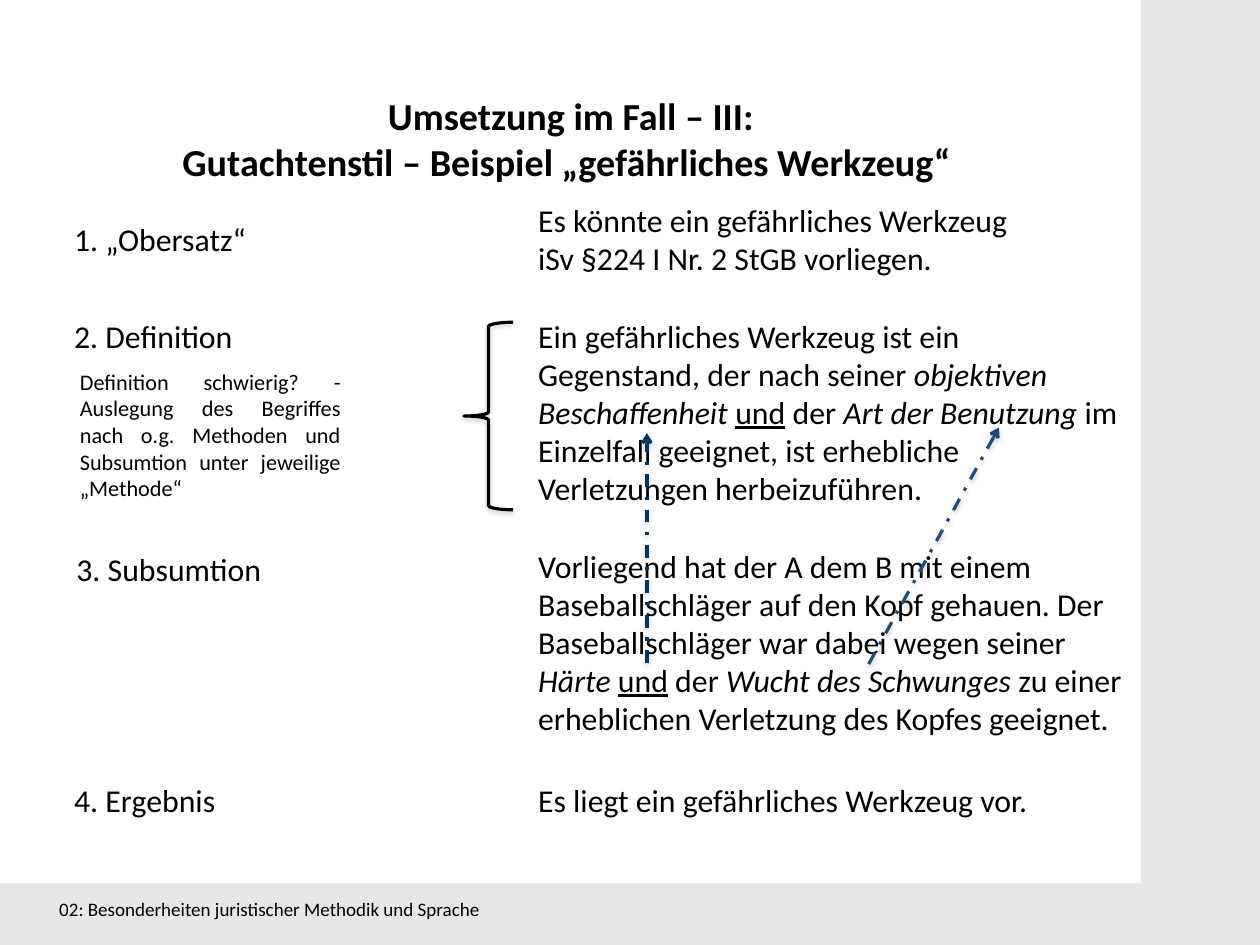
from dataclasses import dataclass
from typing import NamedTuple

from lxml.etree import SubElement
from pptx import Presentation
from pptx.dml.color import RGBColor
from pptx.enum.dml import MSO_LINE
from pptx.enum.shapes import MSO_CONNECTOR, MSO_SHAPE
from pptx.enum.text import MSO_ANCHOR, MSO_AUTO_SIZE, PP_ALIGN
from pptx.oxml.ns import qn
from pptx.util import Cm, Inches, Pt


@dataclass(frozen=True)
class Theme:
    font: str = "Calibri"
    ink: str = "000000"
    paper: str = "FFFFFF"
    margin: str = "E7E7E7"
    navy: str = "003560"
    blue: str = "1F497D"
    shadow: str = "808080"
    title: int = 24
    body: int = 20
    note: int = 14
    footer: int = 12
    stroke: int = 2


class Span(NamedTuple):
    text: str
    italic: bool = False
    underline: bool = False


class Box(NamedTuple):
    left: float
    top: float
    width: float
    height: float


@dataclass(frozen=True)
class TextBlock:
    box: Box
    spans: tuple[Span, ...]
    size: int
    align: PP_ALIGN = PP_ALIGN.LEFT


class Arrow(NamedTuple):
    start: tuple[float, float]
    end: tuple[float, float]
    color: str


THEME = Theme()
LABEL_LEFT, LABEL_WIDTH = 0.55, 2.58
ANSWER_LEFT, ANSWER_WIDTH = 4.61, 5.32
LINE_HEIGHT = 0.44
UND = Span("und", underline=True)
DER = Span(" der ")

TITLE_BOX = Box(1.1, 0.76, 7.79, 0.91)
TITLE_LINES = ("Umsetzung im Fall – III:",
               "Gutachtenstil – Beispiel „gefährliches Werkzeug“ ")


def label(text: str, top: float, left: float = LABEL_LEFT) -> TextBlock:
    return TextBlock(Box(left, top, LABEL_WIDTH, LINE_HEIGHT), (Span(text),), THEME.body)


def answer(top: float, height: float, *spans: Span, width: float = ANSWER_WIDTH) -> TextBlock:
    return TextBlock(Box(ANSWER_LEFT, top, width, height), spans, THEME.body)


TEXT_BLOCKS = (
    label("1. „Obersatz“", 1.87),
    label("2. Definition", 2.72),
    label("3. Subsumtion", 4.76, left=0.57),
    label("4. Ergebnis", 6.78),
    answer(1.71, 1.11,
           Span("Es könnte ein gefährliches Werkzeug iSv §224 I Nr. 2 StGB vorliegen."),
           width=4.57),
    answer(2.72, 1.78,
           Span("Ein gefährliches Werkzeug ist ein Gegenstand, der nach seiner "),
           Span("objektiven Beschaffenheit ", italic=True), UND, DER,
           Span("Art der Benutzung ", italic=True),
           Span("im Einzelfall geeignet, ist erhebliche Verletzungen herbeizuführen.")),
    answer(4.73, 2.12,
           Span("Vorliegend hat der A dem B mit einem Baseballschläger auf den Kopf "
                "gehauen. Der Baseballschläger war dabei wegen seiner "),
           Span("Härte ", italic=True), UND, DER,
           Span("Wucht des Schwunges ", italic=True),
           Span("zu einer erheblichen Verletzung des Kopfes geeignet.")),
    answer(6.78, LINE_HEIGHT, Span("Es liegt ein gefährliches Werkzeug vor."), width=4.84),
    TextBlock(Box(0.6, 3.17, 2.48, 1.28),
              (Span("Definition schwierig? - Auslegung des Begriffes nach o.g. Methoden "
                    "und Subsumtion unter jeweilige „Methode“"),),
              THEME.note, PP_ALIGN.JUSTIFY),
    TextBlock(Box(0.42, 7.8, 5.17, 0.3),
              (Span("02: Besonderheiten juristischer Methodik und Sprache"),), THEME.footer),
)

ARROWS = (
    Arrow((5.66, 5.8), (5.66, 3.79), THEME.navy),
    Arrow((7.6, 5.81), (8.74, 3.74), THEME.blue),
)


def rgb(color: str) -> RGBColor:
    return RGBColor.from_string(color)


def inches(box: Box) -> list[Inches]:
    return [Inches(length) for length in box]


def add_span(paragraph, span: Span, size: int, bold: bool = False) -> None:
    run = paragraph.add_run()
    run.text = span.text
    font = run.font
    font.name, font.size, font.bold = THEME.font, Pt(size), bold
    font.italic, font.underline = span.italic, span.underline
    font.color.rgb = rgb(THEME.ink)


def add_soft_shadow(shape) -> None:
    properties = shape.element.spPr
    effects = properties.find(qn("a:effectLst"))
    if effects is None:
        effects = SubElement(properties, qn("a:effectLst"))
    shadow = SubElement(effects, qn("a:outerShdw"), blurRad=str(Pt(3.1)),
                        dist=str(Pt(1.6)), dir="5400000", rotWithShape="0")
    color = SubElement(shadow, qn("a:srgbClr"), val=THEME.shadow)
    SubElement(color, qn("a:alpha"), val="38000")


def add_title(slide) -> None:
    title = slide.shapes.title
    title.left, title.top, title.width, title.height = inches(TITLE_BOX)
    frame = title.text_frame
    frame.word_wrap, frame.auto_size = True, MSO_AUTO_SIZE.NONE
    frame.vertical_anchor = MSO_ANCHOR.TOP
    for index, line in enumerate(TITLE_LINES):
        paragraph = frame.add_paragraph() if index else frame.paragraphs[0]
        paragraph.alignment = PP_ALIGN.CENTER
        add_span(paragraph, Span(line), THEME.title, bold=True)


def add_text_block(slide, block: TextBlock) -> None:
    frame = slide.shapes.add_textbox(*inches(block.box)).text_frame
    frame.word_wrap = True
    paragraph = frame.paragraphs[0]
    paragraph.alignment = block.align
    for span in block.spans:
        add_span(paragraph, span, block.size)


def add_arrow(slide, arrow: Arrow) -> None:
    ends = [Inches(length) for length in arrow.start + arrow.end]
    connector = slide.shapes.add_connector(MSO_CONNECTOR.STRAIGHT, *ends)
    line = connector.line
    line.color.rgb, line.width = rgb(arrow.color), Pt(THEME.stroke)
    line.dash_style = MSO_LINE.DASH_DOT
    SubElement(connector.element.spPr.find(qn("a:ln")), qn("a:tailEnd"), type="arrow")
    add_soft_shadow(connector)


def add_panel(slide) -> None:
    panel = slide.shapes.add_shape(MSO_SHAPE.RECTANGLE, *inches(Box(0, 0, 9.98, 7.73)))
    panel.shadow.inherit = False
    panel.fill.solid()
    panel.fill.fore_color.rgb = rgb(THEME.paper)
    panel.line.fill.background()
    # Behind the title placeholder
    slide.shapes.title.element.addprevious(panel.element)


def add_brace(slide) -> None:
    brace = slide.shapes.add_shape(MSO_SHAPE.LEFT_BRACE, *inches(Box(4.06, 2.82, 0.43, 1.64)))
    brace.shadow.inherit = False
    brace.fill.background()
    brace.line.color.rgb, brace.line.width = rgb(THEME.ink), Pt(THEME.stroke)
    add_soft_shadow(brace)


def main() -> None:
    deck = Presentation()
    deck.slide_width, deck.slide_height = Cm(28), Cm(21)
    slide = deck.slides.add_slide(deck.slide_layouts[5])

    # Background and title
    slide.background.fill.solid()
    slide.background.fill.fore_color.rgb = rgb(THEME.margin)
    add_panel(slide)
    add_title(slide)

    # Steps, answers and footer
    for block in TEXT_BLOCKS:
        add_text_block(slide, block)

    # Links between definition and subsumption
    for arrow in ARROWS:
        add_arrow(slide, arrow)
    add_brace(slide)

    deck.save("out.pptx")


if __name__ == "__main__":
    main()
